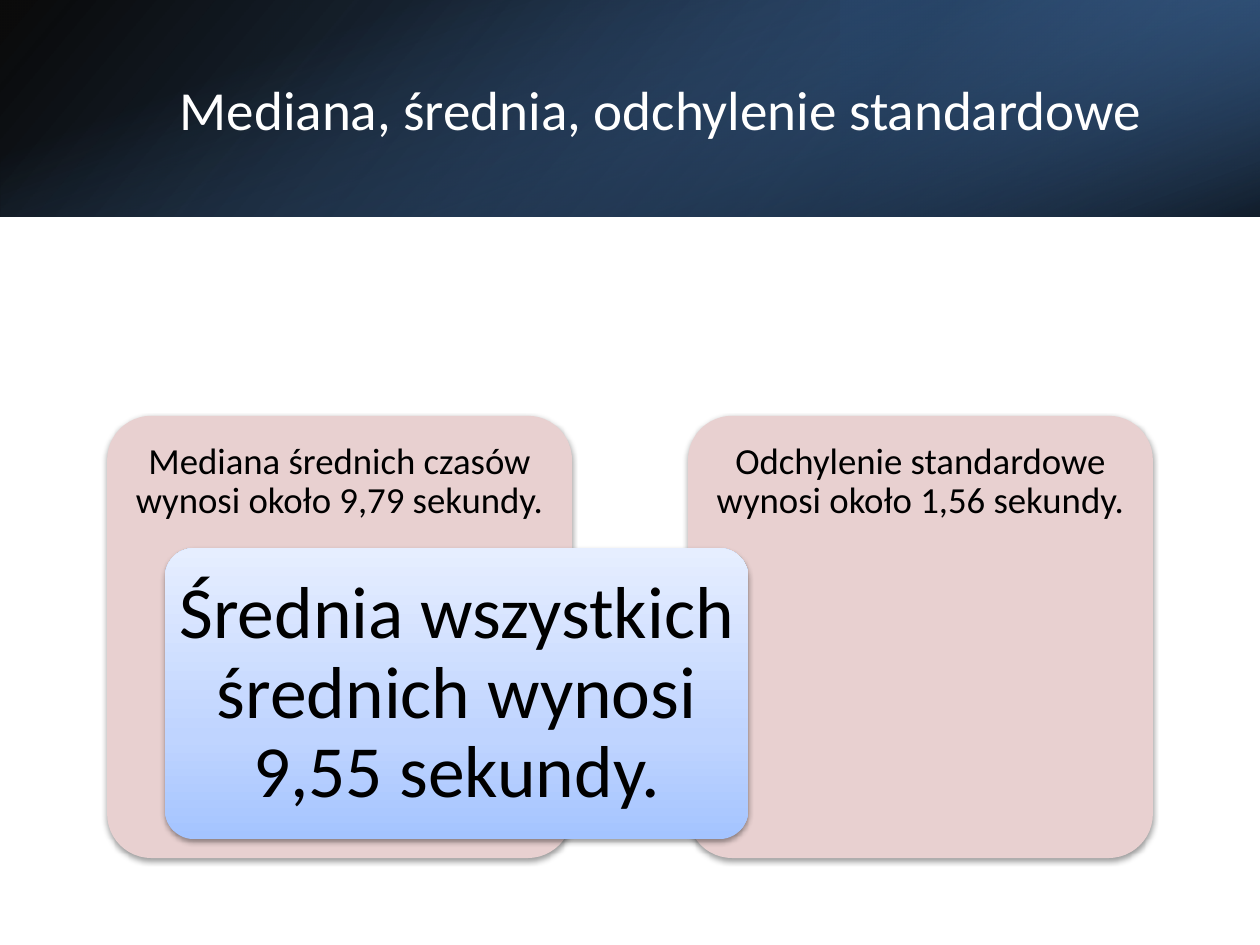
import pptx
import pptx.dml.color
import pptx.enum.shapes
import pptx.enum.text
import pptx.oxml
import pptx.oxml.ns
import pptx.util
from pptx.util import Inches

SHAPES = pptx.enum.shapes.MSO_SHAPE
DRAWING_NS = pptx.oxml.ns.nsdecls("a")


def colour(hex_code):
    return pptx.dml.color.RGBColor.from_string(hex_code)


class Board:
    font = "Calibri"

    def __init__(self, slide):
        self.slide = slide

    def block(self, kind, left, top, width, height, fill=None):
        shape = self.slide.shapes.add_shape(
            kind, Inches(left), Inches(top), Inches(width), Inches(height))
        shape.line.fill.background()
        shape.shadow.inherit = False
        if fill:
            shape.fill.solid()
            shape.fill.fore_color.rgb = colour(fill)
        return shape

    def gradient(self, shape, angle, stops):
        """Stops are (position %, colour, opacity %)."""
        shape.fill.gradient()
        stop_xml = "".join(
            f'<a:gs pos="{pos * 1000}"><a:srgbClr val="{colour(tone)}">'
            f'<a:alpha val="{opacity * 1000}"/></a:srgbClr></a:gs>'
            for pos, tone, opacity in stops)
        properties = shape._element.spPr
        properties.replace(
            properties.find(pptx.oxml.ns.qn("a:gradFill")),
            pptx.oxml.parse_xml(
                f'<a:gradFill {DRAWING_NS} rotWithShape="1"><a:gsLst>{stop_xml}</a:gsLst>'
                f'<a:lin ang="{angle * 60000}" scaled="0"/></a:gradFill>'))

    def card(self, left, top, width, height, fill=None):
        card = self.block(SHAPES.ROUNDED_RECTANGLE, left, top, width, height, fill)
        card.adjustments[0] = 0.1
        effects = card._element.spPr.find(pptx.oxml.ns.qn("a:effectLst"))
        effects.append(pptx.oxml.parse_xml(
            f'<a:outerShdw {DRAWING_NS} blurRad="40000" dist="20000" dir="5400000" '
            'rotWithShape="0"><a:srgbClr val="000000"><a:alpha val="38000"/>'
            '</a:srgbClr></a:outerShdw>'))
        return card

    def band(self, left, top, width, height, angle, stops, rotation=0, flipped=False):
        band = self.block(SHAPES.RECTANGLE, left, top, width, height)
        band.rotation = rotation
        if flipped:
            band._element.spPr.get_or_add_xfrm().set("flipH", "1")
        self.gradient(band, angle, stops)

    def text(self, words, left, top, width, height, size,
             tone="000000", inset_x=0.1, inset_y=0.05, spacing=0.9):
        box = self.slide.shapes.add_textbox(
            Inches(left), Inches(top), Inches(width), Inches(height))
        frame = box.text_frame
        frame.word_wrap = True
        frame.vertical_anchor = pptx.enum.text.MSO_ANCHOR.MIDDLE
        frame.margin_left = frame.margin_right = Inches(inset_x)
        frame.margin_top = frame.margin_bottom = Inches(inset_y)
        paragraph = frame.paragraphs[0]
        paragraph.text = words
        paragraph.alignment = pptx.enum.text.PP_ALIGN.CENTER
        paragraph.line_spacing = spacing
        paragraph.font.name = self.font
        paragraph.font.size = pptx.util.Pt(size)
        paragraph.font.color.rgb = colour(tone)


def main():
    deck = pptx.Presentation()
    deck.slide_width, deck.slide_height = Inches(10), Inches(7.5)
    board = Board(deck.slides.add_slide(deck.slide_layouts[6]))

    # Deviation and median cards
    for left, finding in (
            (5.46, "Odchylenie standardowe wynosi około 1,56 sekundy."),
            (0.85, "Mediana średnich czasów wynosi około 9,79 sekundy.")):
        board.card(left, 3.3, 3.69, 3.51, "E8D0D0")
        board.text(finding, left, 3.3, 3.69, 1.05, 21, inset_x=0.16, inset_y=0.16)

    # Mean card, overlapping both
    mean = board.card(1.31, 4.35, 4.63, 2.31)
    board.gradient(mean, 270, [
        (0, "A4C4FF", 100), (35, "BFD4FF", 100), (100, "E6EEFF", 100)])
    board.text("Średnia wszystkich średnich wynosi 9,55 sekundy.",
               1.38, 4.42, 4.49, 2.18, 42, inset_x=0.03, inset_y=0.03)

    # Header: base, right-hand glow, shading
    header = 1.72
    board.band(0, 0, 10, header, 140,
               [(0, "000000", 96), (100, "376092", 100)], flipped=True)
    board.band(6.67, 0, 3.33, header, 320,
               [(19, "254061", 68), (100, "4F81BD", 79)], rotation=180, flipped=True)
    offset = (10 - header) / 2
    board.band(offset, -offset, header, 10, 340,
               [(23, "4F81BD", 0), (99, "000000", 74)], rotation=90)

    # Title
    board.text("Mediana, średnia, odchylenie standardowe",
               1.12, 0.38, 8.24, 0.96, 31.5, tone="FFFFFF", spacing=1.0)

    deck.save("out.pptx")


if __name__ == "__main__":
    main()
